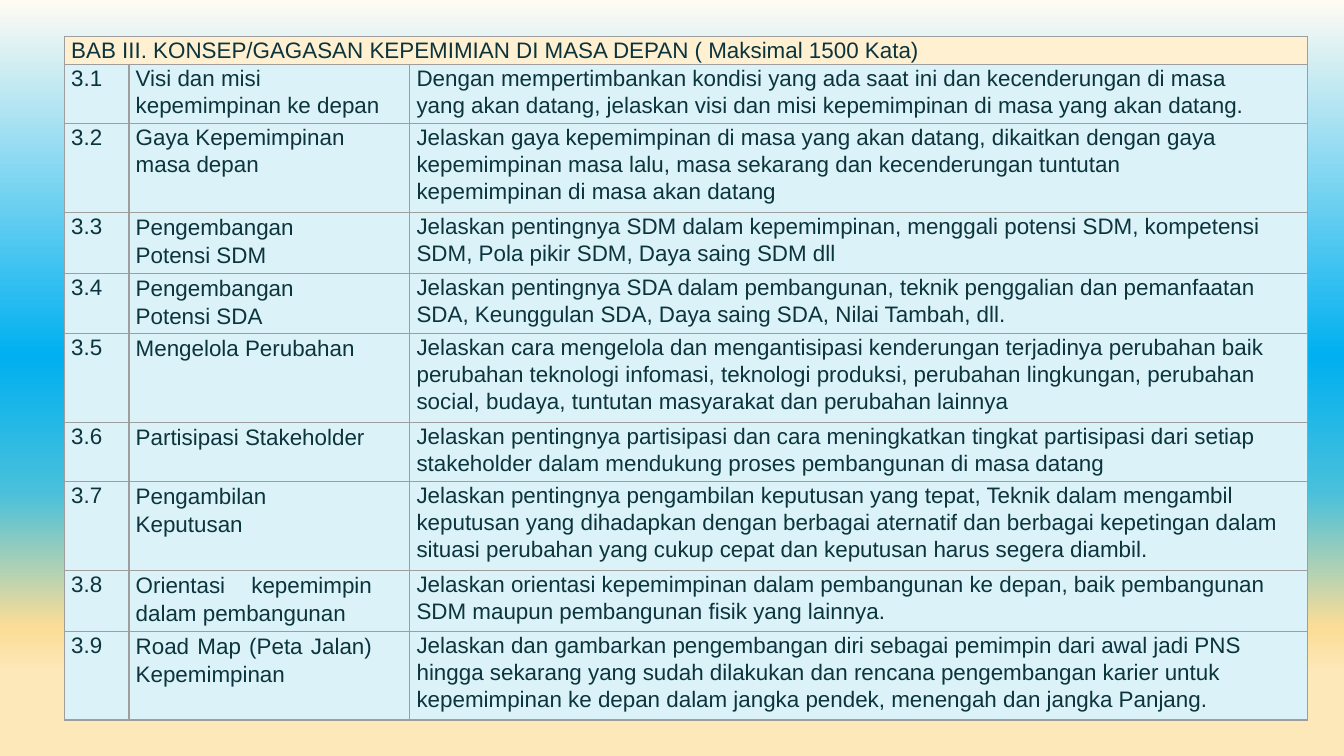
from dataclasses import dataclass

from lxml import etree
from pptx import Presentation
from pptx.dml.color import RGBColor
from pptx.enum.text import MSO_ANCHOR, PP_ALIGN
from pptx.oxml.ns import qn
from pptx.util import Emu, Inches, Pt

LEFT = PP_ALIGN.LEFT
JUSTIFY = PP_ALIGN.JUSTIFY
TOP = MSO_ANCHOR.TOP


@dataclass(frozen=True)
class Theme:
    font: str = "Arial"
    size: float = 12
    ink: str = "0C343D"
    heading_fill: str = "FEF0D1"
    topic_fill: str = "DAF2F8"
    border: str = "9E9E9E"
    border_width: float = 0.75
    sky: tuple = ((0, "FFFBF3"), (47, "00B0F0"), (65, "48C0DB"),
                  (83, "FCDD97"), (89, "FDE8B9"))


@dataclass(frozen=True)
class ParagraphStyle:
    align: int = LEFT
    line_spacing: float = 1.07
    space_after: float = 1.4
    right_indent: float = 0


THEME = Theme()
PLAIN = ParagraphStyle()
JUSTIFIED = ParagraphStyle(JUSTIFY, 1.11, 2, 0.23)
LOOSE = ParagraphStyle(space_after=8, right_indent=0.28)
TIGHT = ParagraphStyle(space_after=1.1)

COLUMN_WIDTHS = (0.48, 2.09, 6.68)
HEADING_HEIGHT = 0.21
SHORT, MEDIUM, TALL = 0.44, 0.45, 0.66

HEADING = "BAB III. KONSEP/GAGASAN KEPEMIMIAN DI MASA DEPAN ( Maksimal 1500 Kata)"
TOPICS = (
    (SHORT, "Visi dan misi kepemimpinan ke depan", PLAIN,
     "Dengan mempertimbankan kondisi yang ada saat ini dan kecenderungan di masa "
     "yang akan datang, jelaskan visi dan misi kepemimpinan di masa yang akan datang.", LOOSE),
    (TALL, "Gaya Kepemimpinan masa depan", PLAIN,
     "Jelaskan gaya kepemimpinan di masa yang akan datang, dikaitkan dengan gaya "
     "kepemimpinan masa lalu, masa sekarang dan kecenderungan tuntutan "
     "kepemimpinan di masa akan datang", LOOSE),
    (MEDIUM, "Pengembangan Potensi SDM", JUSTIFIED,
     "Jelaskan pentingnya SDM dalam kepemimpinan, menggali potensi SDM, kompetensi "
     "SDM, Pola pikir SDM, Daya saing SDM dll", LOOSE),
    (MEDIUM, "Pengembangan Potensi SDA", JUSTIFIED,
     "Jelaskan pentingnya SDA dalam pembangunan, teknik penggalian dan pemanfaatan "
     "SDA, Keunggulan SDA, Daya saing SDA, Nilai Tambah, dll.", LOOSE),
    (TALL, "Mengelola Perubahan", JUSTIFIED,
     "Jelaskan cara mengelola dan mengantisipasi kenderungan terjadinya perubahan baik "
     "perubahan teknologi infomasi, teknologi produksi, perubahan lingkungan, perubahan "
     "social, budaya, tuntutan masyarakat dan perubahan lainnya", PLAIN),
    (SHORT, "Partisipasi Stakeholder", JUSTIFIED,
     "Jelaskan pentingnya partisipasi dan cara meningkatkan tingkat partisipasi dari setiap "
     "stakeholder dalam mendukung proses pembangunan di masa datang", TIGHT),
    (TALL, "Pengambilan Keputusan", JUSTIFIED,
     "Jelaskan pentingnya pengambilan keputusan yang tepat, Teknik dalam mengambil "
     "keputusan yang dihadapkan dengan berbagai aternatif dan berbagai kepetingan dalam "
     "situasi perubahan yang cukup cepat dan keputusan harus segera diambil.", TIGHT),
    (MEDIUM, "Orientasi kepemimpin dalam pembangunan", JUSTIFIED,
     "Jelaskan orientasi kepemimpinan dalam pembangunan ke depan, baik pembangunan "
     "SDM maupun pembangunan fisik yang lainnya.", TIGHT),
    (TALL, "Road Map (Peta Jalan) Kepemimpinan", JUSTIFIED,
     "Jelaskan dan gambarkan pengembangan diri sebagai pemimpin dari awal jadi PNS "
     "hingga sekarang yang sudah dilakukan dan rencana pengembangan karier untuk "
     "kepemimpinan ke depan dalam jangka pendek, menengah dan jangka Panjang.", TIGHT),
)


def paint_background(slide):
    fill = slide.background.fill
    fill.gradient()
    fill.gradient_angle = 270
    stops = slide.element.find(".//" + qn("a:gsLst"))
    for stop in list(stops):
        stops.remove(stop)
    for percent, color in THEME.sky:
        stop = etree.SubElement(stops, qn("a:gs"), pos=str(percent * 1000))
        etree.SubElement(stop, qn("a:srgbClr"), val=color)


def format_cell(cell, fill_color):
    cell.margin_left = cell.margin_right = Inches(0.05)
    cell.margin_top = cell.margin_bottom = 0
    cell.vertical_anchor = TOP
    cell.fill.solid()
    cell.fill.fore_color.rgb = RGBColor.from_string(fill_color)
    properties = cell._tc.get_or_add_tcPr()
    for position, side in enumerate(("a:lnL", "a:lnR", "a:lnT", "a:lnB")):
        border = etree.Element(qn(side), w=str(Pt(THEME.border_width)))
        solid = etree.SubElement(border, qn("a:solidFill"))
        etree.SubElement(solid, qn("a:srgbClr"), val=THEME.border)
        properties.insert(position, border)


def write_cell(cell, text, style):
    paragraph = cell.text_frame.paragraphs[0]
    paragraph.alignment = style.align
    paragraph.line_spacing = style.line_spacing
    paragraph.space_after = Pt(style.space_after)
    if style.right_indent:
        paragraph._p.get_or_add_pPr().set("marR", str(Inches(style.right_indent)))
    run = paragraph.add_run()
    run.text = text
    run.font.name = THEME.font
    run.font.size = Pt(THEME.size)
    run.font.color.rgb = RGBColor.from_string(THEME.ink)


def add_chapter_table(slide, left, top, width, height):
    row_heights = [HEADING_HEIGHT] + [topic[0] for topic in TOPICS]
    chapter = slide.shapes.add_table(
        len(row_heights), len(COLUMN_WIDTHS), left, top, width, height).table
    chapter.first_row = False
    chapter.horz_banding = False
    for column, share in zip(chapter.columns, COLUMN_WIDTHS):
        column.width = Emu(int(width * share / sum(COLUMN_WIDTHS)))
    for row, share in zip(chapter.rows, row_heights):
        row.height = Emu(int(height * share / sum(row_heights)))

    for index, row in enumerate(chapter.rows):
        for cell in row.cells:
            format_cell(cell, THEME.topic_fill if index else THEME.heading_fill)
    chapter.cell(0, 0).merge(chapter.cell(0, len(COLUMN_WIDTHS) - 1))
    write_cell(chapter.cell(0, 0), HEADING, PLAIN)

    for number, (_, title, title_style, task, task_style) in enumerate(TOPICS, 1):
        write_cell(chapter.cell(number, 0), f"3.{number}", PLAIN)
        write_cell(chapter.cell(number, 1), title, title_style)
        write_cell(chapter.cell(number, 2), task, task_style)


def main():
    deck = Presentation()
    deck.slide_width = Inches(10)
    deck.slide_height = Emu(deck.slide_width * 9 // 16)
    slide = deck.slides.add_slide(deck.slide_layouts[6])
    paint_background(slide)
    add_chapter_table(slide, Inches(0.48), Inches(0.27), Inches(9.25), Inches(5.09))
    deck.save("out.pptx")


if __name__ == "__main__":
    main()
